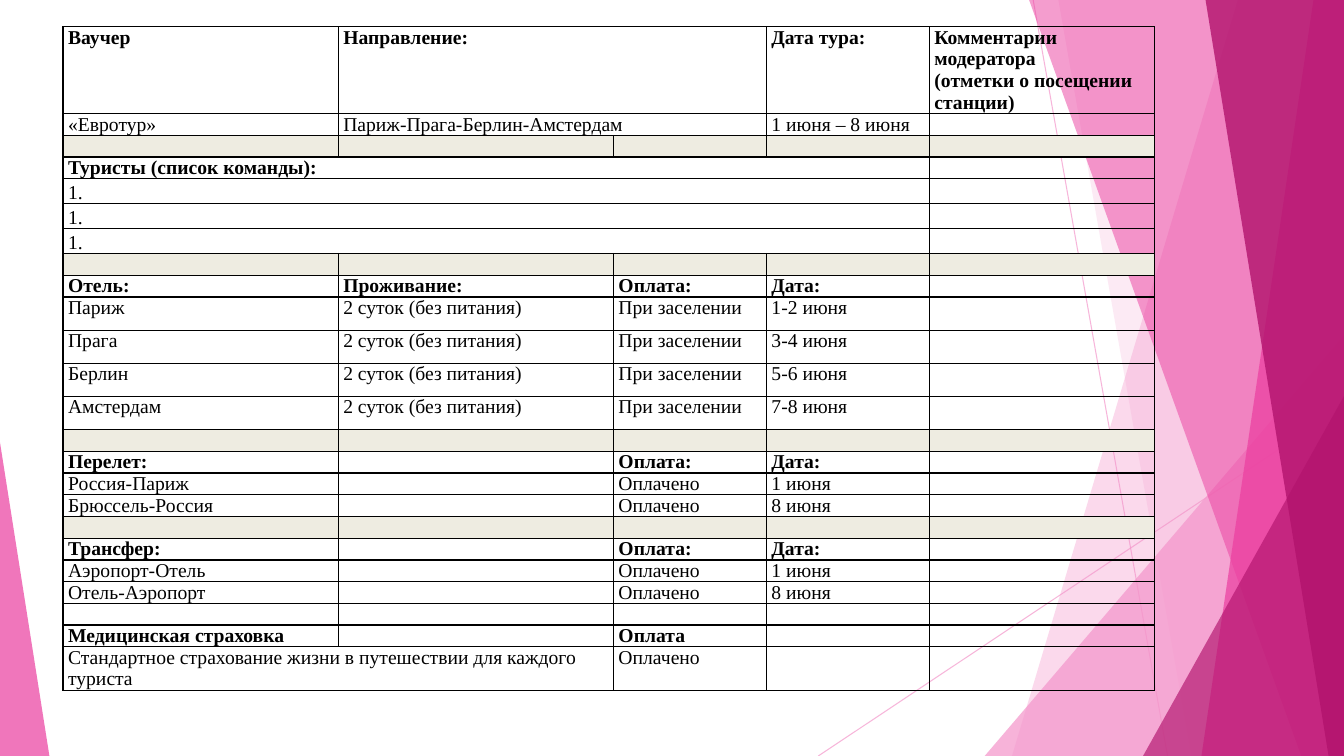
from dataclasses import dataclass

from lxml.etree import SubElement
from pptx import Presentation
from pptx.dml.color import RGBColor
from pptx.enum.shapes import MSO_CONNECTOR as CONN, MSO_SHAPE as SHAPE
from pptx.oxml.ns import qn
from pptx.util import Pt


@dataclass(frozen=True)
class Theme:
    """Colours, font and sizes of the slide."""
    pale: str = "F496CB"
    pink: str = "EB3D9F"
    deep: str = "B2136D"
    ink: str = "000000"
    sand: str = "EEECE1"
    font: str = "Times New Roman"
    size: int = 14
    list_spacing: float = 1.15
    hairline: float = 0.75
    border: float = 1


T = Theme()
PLAIN, LIST, HOTEL = 15.5, 17.8, 23.7
COLUMNS = (196.6, 196.6, 109.3, 116.4, 160.7)
BLANK = ("",) * 5
PAYMENT = ("Оплата:", "Дата:", "")
STAY = ("2 суток (без питания)", "При заселении")

# Each row: height, style, cell texts; None continues the cell on its left.
ROWS = [
    (62, "bold", ("Ваучер", "Направление:", None, "Дата тура:",
                  "Комментарии модератора\n(отметки о посещении станции)")),
    (PLAIN, "text", ("«Евротур»", "Париж-Прага-Берлин-Амстердам", None,
                     "1 июня – 8 июня", "")),
    (PLAIN, "band", BLANK),
    (PLAIN, "bold", ("Туристы (список команды):", None, None, None, "")),
    *[(LIST, "list", ("1.", None, None, None, ""))] * 3,
    (PLAIN, "band", BLANK),
    (PLAIN, "bold", ("Отель:", "Проживание:", *PAYMENT)),
    *[(HOTEL, "text", (city, *STAY, dates, "")) for city, dates in (
        ("Париж", "1-2 июня"), ("Прага", "3-4 июня"),
        ("Берлин", "5-6 июня"), ("Амстердам", "7-8 июня"))],
    (PLAIN, "band", BLANK),
    (PLAIN, "bold", ("Перелет:", "", *PAYMENT)),
    (PLAIN, "text", ("Россия-Париж", "", "Оплачено", "1 июня", "")),
    (PLAIN, "text", ("Брюссель-Россия", "", "Оплачено", "8 июня", "")),
    (PLAIN, "band", BLANK),
    (PLAIN, "bold", ("Трансфер:", "", *PAYMENT)),
    (PLAIN, "text", ("Аэропорт-Отель", "", "Оплачено", "1 июня", "")),
    (PLAIN, "text", ("Отель-Аэропорт", "", "Оплачено", "8 июня", "")),
    (PLAIN, "text", BLANK),
    (PLAIN, "bold", ("Медицинская страховка", "", "Оплата", "", "")),
    (31, "text", ("Стандартное страхование жизни в путешествии для каждого туриста",
                  None, "Оплачено", "", "")),
]


def rgb(color):
    """Turn a hex string into a colour."""
    return RGBColor.from_string(color)


def set_alpha(sp, percent):
    """Make the explicit colours of a shape translucent."""
    for clr in sp.element.iter(qn("a:srgbClr")):
        SubElement(clr, qn("a:alpha"), val=str(percent * 1000))


def paint(sp, color, alpha):
    """Give a shape a translucent fill without outline or shadow."""
    sp.shadow.inherit = False
    sp.fill.solid()
    sp.fill.fore_color.rgb = rgb(color)
    sp.line.fill.background()
    set_alpha(sp, alpha)


def add_ray(s, x1, y1, x2, y2):
    """Draw a thin translucent line."""
    cx = s.shapes.add_connector(CONN.STRAIGHT, Pt(x1), Pt(y1), Pt(x2), Pt(y2))
    cx.line.width = Pt(T.hairline)
    cx.line.color.rgb = rgb(T.pale)
    set_alpha(cx, 70)
    SubElement(cx.element.spPr, qn("a:effectLst"))


def add_band(s, box, top_x, bottom_x, color, alpha):
    """Draw a slanted band reaching the right edge of the box."""
    x, y, w, h = box
    fb = s.shapes.build_freeform(Pt(x + top_x), Pt(y))
    fb.add_line_segments([(Pt(x + w), Pt(y)), (Pt(x + w), Pt(y + h)),
                          (Pt(x + bottom_x), Pt(y + h))], close=True)
    paint(fb.convert_to_shape(), color, alpha)


def add_corner(s, box, w, h, right, color, alpha):
    """Draw a right triangle in a bottom corner of the box."""
    x = box[0] + (box[2] - w if right else 0)
    sp = s.shapes.add_shape(SHAPE.ISOSCELES_TRIANGLE, Pt(x),
                            Pt(box[1] + box[3] - h), Pt(w), Pt(h))
    sp.adjustments[0] = 1 if right else 0
    paint(sp, color, alpha)


def add_backdrop(s, box):
    """Build the faceted pink backdrop."""
    x, y, w, h = box
    add_ray(s, x + 738, y, x + 834, y + h)
    add_ray(s, x + w, y + 290, x + 584.5, y + h)
    add_band(s, box, 884.2, 722.9, T.pale, 36)
    add_band(s, box, 756, 851, T.pale, 20)
    add_corner(s, box, 256.6, 300.2, True, T.pale, 72)
    add_band(s, box, 735.1, 929.5, T.pink, 50)
    add_band(s, box, 938.2, 858.2, T.pink, 70)
    add_band(s, box, 861.1, 949, T.deep, 80)
    add_corner(s, box, 143.5, 257, True, T.deep, 66)
    add_corner(s, box, 35.3, 223.9, False, T.pink, 70)


def add_borders(cell):
    """Outline all four sides of a cell."""
    tc_pr = cell._tc.get_or_add_tcPr()
    for side in ("lnL", "lnR", "lnT", "lnB"):
        ln = SubElement(tc_pr, qn(f"a:{side}"), w=str(Pt(T.border)))
        fill = SubElement(ln, qn("a:solidFill"))
        SubElement(fill, qn("a:srgbClr"), val=T.ink)


def fill_cell(cell, text, style):
    """Write and format one cell."""
    cell.margin_left = cell.margin_right = Pt(3.6)
    cell.margin_top = cell.margin_bottom = 0
    add_borders(cell)
    if style == "band":
        cell.fill.solid()
        cell.fill.fore_color.rgb = rgb(T.sand)
    else:
        cell.fill.background()
    cell.text_frame.text = text or ""
    for p in cell.text_frame.paragraphs:
        if style == "list" and text:
            p.line_spacing = T.list_spacing
        for r in p.runs:
            r.font.name, r.font.size = T.font, Pt(T.size)
            r.font.bold = style == "bold"
            r.font.color.rgb = rgb(T.ink)
        if not p.runs:
            end = p._p.get_or_add_endParaRPr()
            end.set("sz", str(T.size * 100))
            SubElement(end, qn("a:latin"), typeface=T.font)


def add_voucher(s, x, y):
    """Build the tour voucher table at the given corner."""
    height = sum(row[0] for row in ROWS)
    table = s.shapes.add_table(len(ROWS), len(COLUMNS), Pt(x), Pt(y),
                               Pt(sum(COLUMNS)), Pt(height)).table
    table.first_row = table.horz_banding = False
    for col, width in zip(table.columns, COLUMNS):
        col.width = Pt(width)
    for i, (row_height, style, texts) in enumerate(ROWS):
        table.rows[i].height = Pt(row_height)
        for j, text in enumerate(texts):
            fill_cell(table.cell(i, j), text, style)
        for j, text in enumerate(texts):
            span = 1
            while j + span < len(texts) and texts[j + span] is None:
                span += 1
            if text is not None and span > 1:
                table.cell(i, j).merge(table.cell(i, j + span - 1))


def main():
    """Create the voucher slide."""
    prs = Presentation()
    prs.slide_width, prs.slide_height = Pt(960), Pt(540)
    s = prs.slides.add_slide(prs.slide_layouts[6])
    add_backdrop(s, (0, 0, 960, 540))
    add_voucher(s, 45, 19.2)
    prs.save("out.pptx")


if __name__ == "__main__":
    main()
